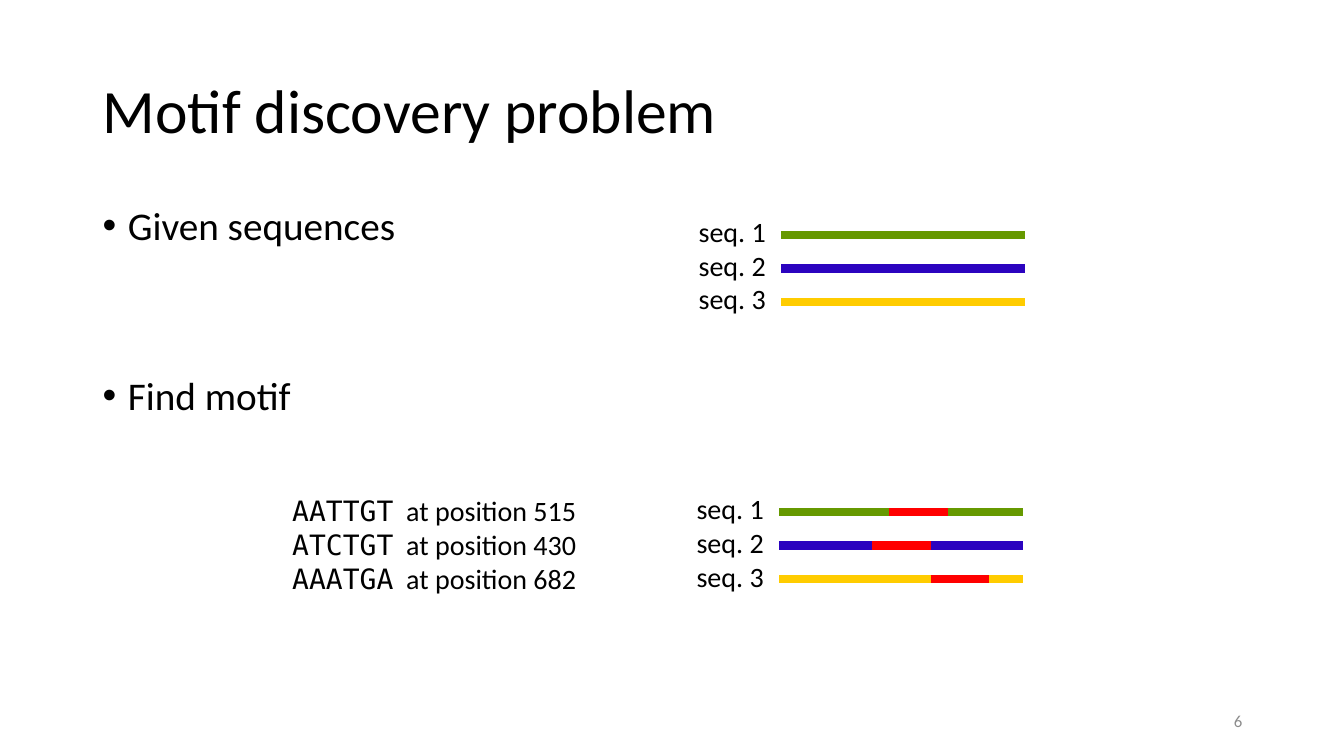
from lxml import etree
from pptx import Presentation
from pptx.dml.color import RGBColor
from pptx.enum.shapes import MSO_CONNECTOR
from pptx.enum.text import MSO_ANCHOR, PP_ALIGN
from pptx.oxml.ns import qn
from pptx.util import Inches, Pt

STRAIGHT = MSO_CONNECTOR.STRAIGHT
TOP, MIDDLE = MSO_ANCHOR.TOP, MSO_ANCHOR.MIDDLE
LEFT, RIGHT = PP_ALIGN.LEFT, PP_ALIGN.RIGHT
SANS, MONO = "Calibri", "DejaVu Sans Mono"
COLORS = {"text": "000000", "page": "8C8C8C", "motif": "FF0000",
          "seq. 1": "669900", "seq. 2": "2B03BF", "seq. 3": "FFCC00"}

MARGIN, CONTENT_WIDTH = 0.92, 11.5
ROW = 1 / 3
SEQUENCE_LENGTH, MOTIF_LENGTH = 2.42, 0.58
LABEL_OFFSET = 0.92

presentation = Presentation()
presentation.slide_width = Inches(13.33)
presentation.slide_height = Inches(7.5)
slide = presentation.slides.add_slide(presentation.slide_layouts[6])


def add_text(box, lines, size, color="text", anchor=TOP, align=LEFT, wrap=True):
    """Write lines, each a list of (text, font) runs, and return the paragraphs."""
    frame = slide.shapes.add_textbox(*map(Inches, box)).text_frame
    frame.word_wrap = wrap
    frame.vertical_anchor = anchor
    for index, line in enumerate(lines):
        paragraph = frame.paragraphs[0] if index == 0 else frame.add_paragraph()
        paragraph.alignment = align
        for text, font in line:
            run = paragraph.add_run()
            run.text = text
            run.font.name = font
            run.font.size = Pt(size)
            run.font.color.rgb = RGBColor.from_string(COLORS[color])
    return frame.paragraphs


def add_strand(left, y, length, color):
    strand = slide.shapes.add_connector(
        STRAIGHT, Inches(left), Inches(y), Inches(left + length), Inches(y))
    strand.line.color.rgb = RGBColor.from_string(COLORS[color])
    strand.line.width = Pt(6)
    etree.SubElement(strand._element.spPr, qn("a:effectLst"))


title = add_text((MARGIN, 0.4, CONTENT_WIDTH, 1.45),
                 [[("Motif discovery problem", SANS)]], 44, anchor=MIDDLE)
title[0].line_spacing = 0.9

steps = add_text((MARGIN, 2, CONTENT_WIDTH, 4.76),
                 [[("Given sequences", SANS)], [("Find motif", SANS)]], 28)
for step in steps:
    properties = step._p.get_or_add_pPr()
    properties.set("marL", str(Inches(0.25)))
    properties.set("indent", str(-Inches(0.25)))
    etree.SubElement(properties, qn("a:buFont"), typeface="Arial")
    etree.SubElement(properties, qn("a:buChar"), char="•")
    step.line_spacing = 0.9
steps[1].space_before = Pt(91)

motifs = [("AATTGT", 515), ("ATCTGT", 430), ("AAATGA", 682)]
matches = add_text((2.8, 4.85, 3.2, 1.11),
                   [[(motif, MONO), (f"\tat position {position}", SANS)]
                    for motif, position in motifs], 20)
for match in matches:
    tabs = etree.SubElement(match._p.get_or_add_pPr(), qn("a:tabLst"))
    etree.SubElement(tabs, qn("a:tab"), pos=str(Inches(1.13)), algn="l")

# Each group: left end, height of the first strand, offsets of the motifs
sequences = ["seq. 1", "seq. 2", "seq. 3"]
groups = [(7.75, 2.33, []), (7.73, 5.08, [1.09, 0.92, 1.5])]
for left, top, motif_offsets in groups:
    for row, sequence in enumerate(sequences):
        add_strand(left, top + row * ROW, SEQUENCE_LENGTH, sequence)
    for row, offset in enumerate(motif_offsets):
        add_strand(left + offset, top + row * ROW, MOTIF_LENGTH, "motif")
    add_text((left - LABEL_OFFSET, top - 0.25, 0.88, 1.11),
             [[(sequence, SANS)] for sequence in sequences], 20, wrap=False)

add_text((9.42, 6.95, 3, 0.4), [[("6", SANS)]], 12, "page", MIDDLE, RIGHT)

presentation.save("out.pptx")
